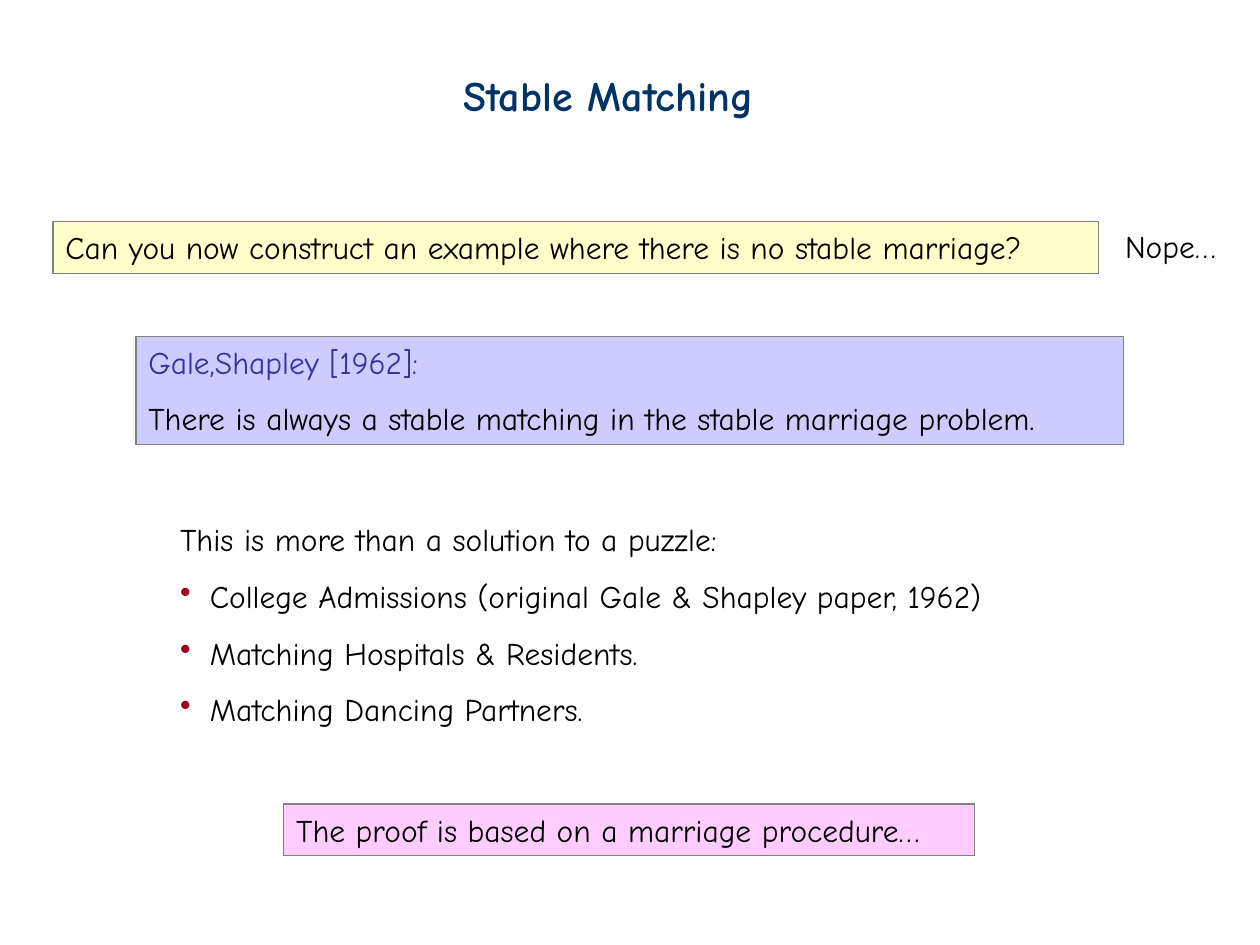
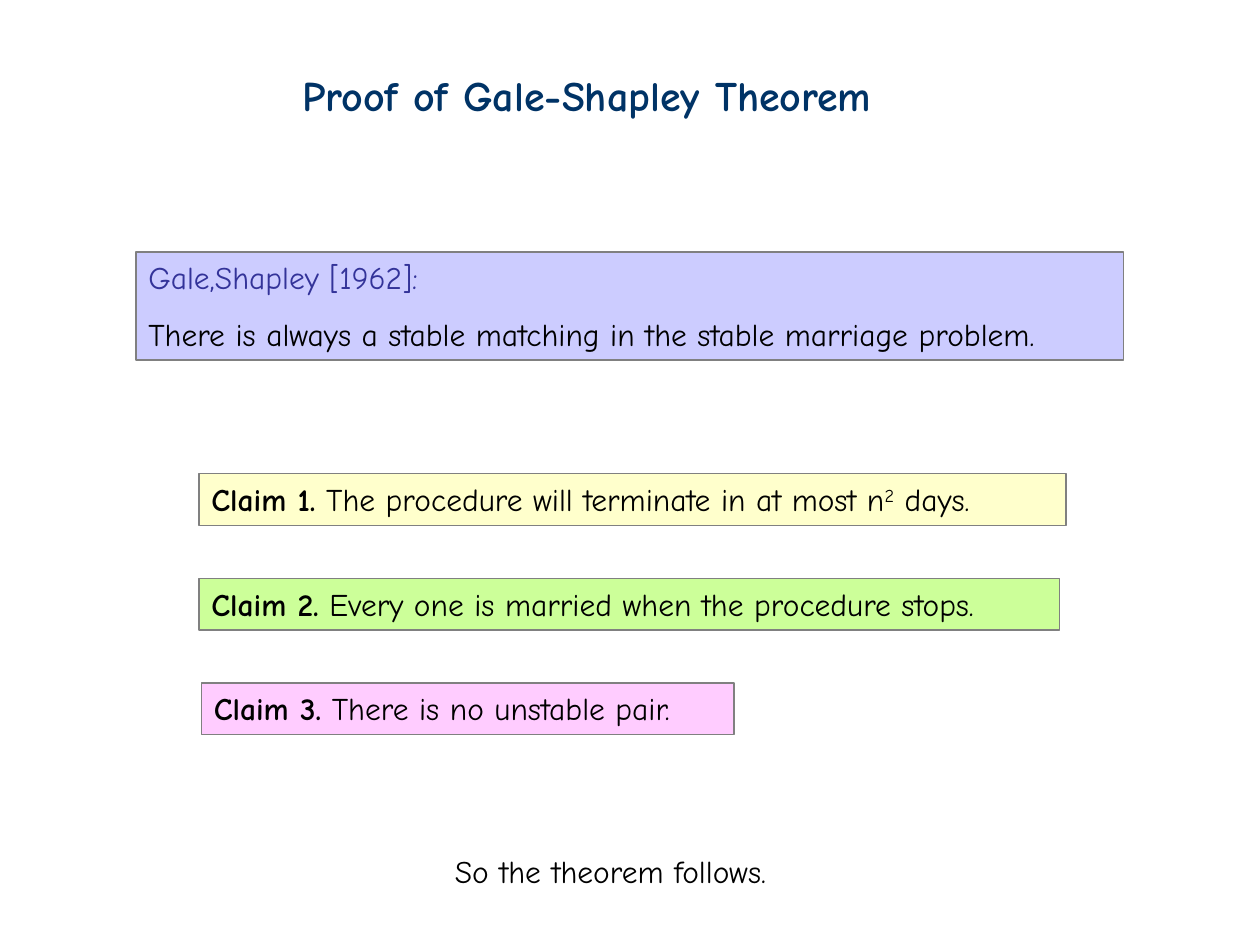
from lxml import etree
from pptx import Presentation
from pptx.dml.color import RGBColor
from pptx.enum.shapes import MSO_SHAPE
from pptx.enum.text import MSO_ANCHOR, PP_ALIGN
from pptx.oxml.ns import qn
from pptx.util import Cm, Pt

RECTANGLE = MSO_SHAPE.RECTANGLE
TOP = MSO_ANCHOR.TOP
LEFT = PP_ALIGN.LEFT

COLORS = {
    "title": "003366",
    "text": "000000",
    "source": "333399",
    "bullet": "A50021",
    "border": "808080",
    "yellow": "FFFFCC",
    "lavender": "CCCCFF",
    "green": "CCFF99",
    "pink": "FFCCFF",
}

# Each style pairs a colour with the font attributes to set
BODY_FONT = {"name": "Comic Neue", "size": Pt(18), "bold": False}
STYLES = {
    "title": ("title", {**BODY_FONT, "size": Pt(24), "bold": True}),
    "body": ("text", BODY_FONT),
    "strong": ("text", {**BODY_FONT, "bold": True}),
    "source": ("source", BODY_FONT),
    "superscript": ("text", BODY_FONT),
}
FRAME_FORMAT = {
    "word_wrap": True,
    "vertical_anchor": TOP,
    "margin_left": Cm(0.25),
    "margin_right": Cm(0.25),
    "margin_top": Cm(0.13),
    "margin_bottom": Cm(0.13),
}
ROW_HEIGHT = 1.04
BULLET_INDENT = Cm(0.6)


def add_box(page, place, paragraphs, fill=None):
    """Add a text box, or a bordered rectangle when a fill is given.

    Each paragraph is a list of (text, style) pairs.
    """
    lengths = [Cm(length) for length in place]
    if fill:
        box = page.shapes.add_shape(RECTANGLE, *lengths)
        box.shadow.inherit = False
        box.fill.solid()
        box.fill.fore_color.rgb = RGBColor.from_string(COLORS[fill])
        box.line.color.rgb = RGBColor.from_string(COLORS["border"])
        box.line.width = Pt(0.75)
    else:
        box = page.shapes.add_textbox(*lengths)

    frame = box.text_frame
    for name, value in FRAME_FORMAT.items():
        setattr(frame, name, value)

    for index, pieces in enumerate(paragraphs):
        para = frame.add_paragraph() if index else frame.paragraphs[0]
        para.alignment = LEFT
        para.line_spacing = 1.5 if index else 1.0
        for text, style in pieces:
            span = para.add_run()
            span.text = text
            color, font_format = STYLES[style]
            for name, value in font_format.items():
                setattr(span.font, name, value)
            span.font.color.rgb = RGBColor.from_string(COLORS[color])
            if style == "superscript":
                span._r.get_or_add_rPr().set("baseline", "30000")
    return box


def add_bullet(para):
    """Give a paragraph a coloured bullet and a hanging indent."""
    properties = para._p.get_or_add_pPr()
    properties.set("marL", str(BULLET_INDENT))
    properties.set("indent", str(-BULLET_INDENT))
    color = etree.SubElement(properties, qn("a:buClr"))
    etree.SubElement(color, qn("a:srgbClr"), val=COLORS["bullet"])
    etree.SubElement(properties, qn("a:buChar"), char="•")


deck = Presentation()
deck.slide_width = Cm(25.4)
deck.slide_height = Cm(19.05)
blank = deck.slide_layouts[6]

# Shared by both slides: title and theorem
pages = []
for title, title_left, title_width, theorem_top in [
    ("Stable Matching", 9.09, 7.21, 6.78),
    ("Proof of Gale-Shapley Theorem", 5.84, 13.64, 5.08),
]:
    page = deck.slides.add_slide(blank)
    add_box(page, (title_left, 1.27, title_width, 1.27), [[(title, "title")]])
    theorem = [
        [("Gale,Shapley [1962]:", "source")],
        [("There is always a stable matching in the stable marriage problem.", "body")],
    ]
    add_box(page, (2.74, theorem_top, 19.91, 2.18), theorem, "lavender")
    pages.append(page)
matching_page, proof_page = pages

# Slide 1: question and answer
question = "Can you now construct an example where there is no stable marriage?"
add_box(matching_page, (1.07, 4.47, 21.08, ROW_HEIGHT), [[(question, "body")]], "yellow")
add_box(matching_page, (22.43, 4.45, 2.46, ROW_HEIGHT), [[("Nope…", "body")]])

# Slide 1: applications
applications = [
    "This is more than a solution to a puzzle:",
    "College Admissions (original Gale & Shapley paper, 1962)",
    "Matching Hospitals & Residents.",
    "Matching Dancing Partners.",
]
application_box = add_box(
    matching_page, (3.38, 10.36, 18.62, 4.47), [[(line, "body")] for line in applications]
)
for para in application_box.text_frame.paragraphs[1:]:
    add_bullet(para)

# Slide 1: lead into the proof
lead = "The proof is based on a marriage procedure…"
add_box(matching_page, (5.72, 16.21, 13.92, ROW_HEIGHT), [[(lead, "body")]], "pink")

# Slide 2: claims at equal steps
claims = [
    (4.01, 17.48, "yellow", [
        (" The procedure will terminate in at most n", "body"),
        ("2", "superscript"),
        (" days.", "body"),
    ]),
    (4.01, 17.35, "green", [(" Every one is married when the procedure stops.", "body")]),
    (4.06, 10.74, "pink", [(" There is no unstable pair.", "body")]),
]
for index, (left, width, fill, statement) in enumerate(claims):
    label = (f"Claim {index + 1}.", "strong")
    place = (left, 9.55 + 2.11 * index, width, ROW_HEIGHT)
    add_box(proof_page, place, [[label, *statement]], fill)

# Slide 2: conclusion
add_box(proof_page, (8.92, 17.04, 7.59, ROW_HEIGHT), [[("So the theorem follows.", "body")]])

deck.save("out.pptx")
